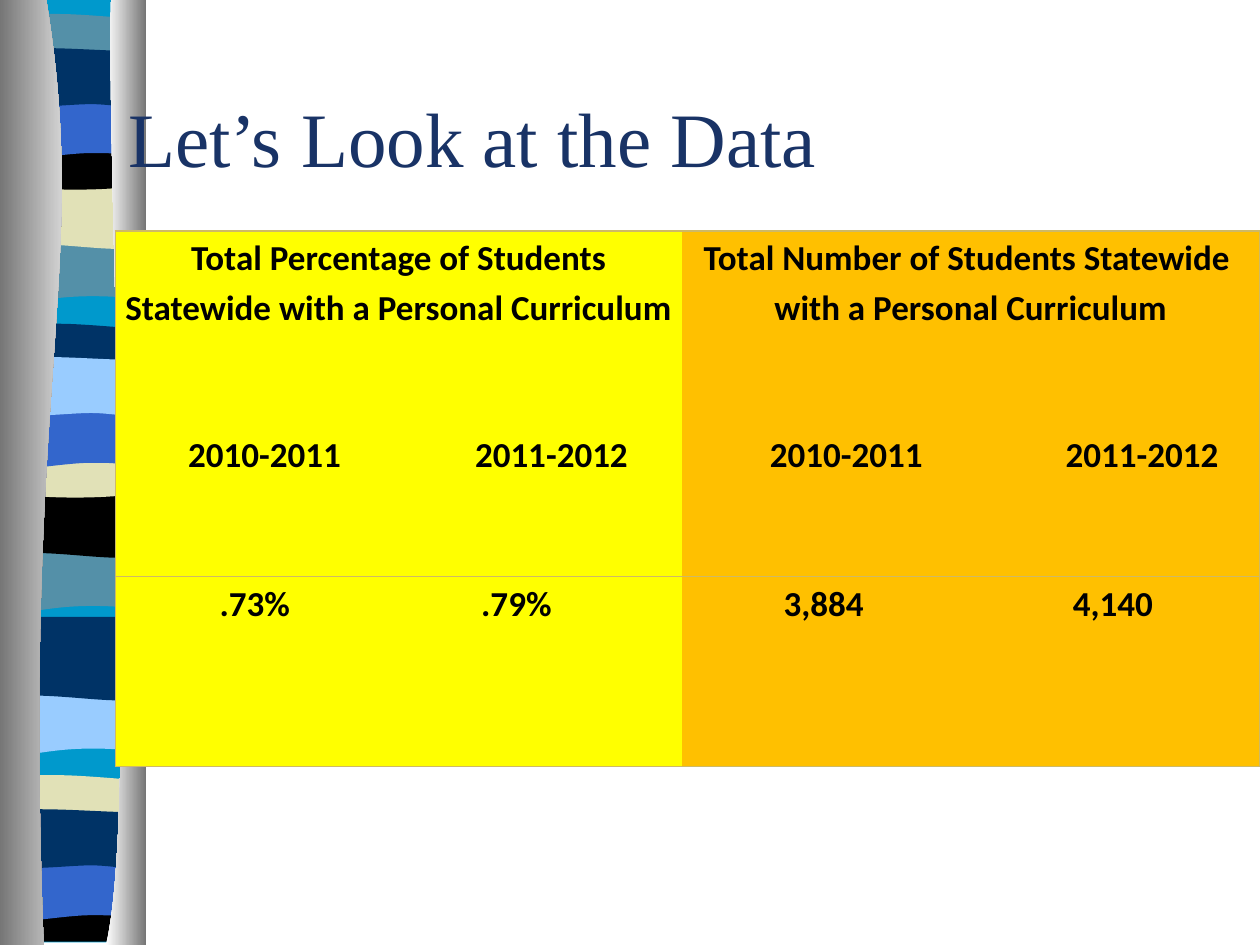
from dataclasses import dataclass

from lxml.etree import SubElement
from pptx import Presentation
from pptx.dml.color import RGBColor
from pptx.enum.text import MSO_ANCHOR, PP_ALIGN
from pptx.oxml import parse_xml
from pptx.oxml.ns import nsdecls, qn
from pptx.util import Pt

TEAL = RGBColor(0x00, 0x99, 0xCC)
SLATE = RGBColor(0x54, 0x90, 0xA8)
SAND = RGBColor(0xE1, 0xE1, 0xB7)
BLACK = RGBColor(0x00, 0x00, 0x00)
BLUE = RGBColor(0x33, 0x66, 0xCC)
NAVY = RGBColor(0x00, 0x33, 0x66)
SKY = RGBColor(0x99, 0xCC, 0xFF)
GREY = RGBColor(0x76, 0x76, 0x76)
WHITE = RGBColor(0xFF, 0xFF, 0xFF)
TITLE_BLUE = RGBColor(0x19, 0x33, 0x66)
YELLOW = RGBColor(0xFF, 0xFF, 0x00)
ORANGE = RGBColor(0xFF, 0xC0, 0x00)
BORDER = "CEB966"

PAGE_HEIGHT = 540
BAND_LEFT, BAND_RIGHT = 4, 82

Point = tuple[float, float]
Segment = tuple[Point, ...]  # one point for a line, three for a cubic curve


@dataclass(frozen=True)
class Wave:
    """Outline of a band, with heights measured down from its top."""
    depth: float
    bottom: tuple[Segment, ...]  # right to left
    top: tuple[Segment, ...] = (((BAND_RIGHT, 0),),)  # left to right


@dataclass(frozen=True)
class Band:
    colour: RGBColor
    top: float
    wave: Wave


@dataclass(frozen=True)
class Entry:
    text: str
    tabs: tuple[float, ...] = ()
    centred: bool = False
    space_before: float = 0


@dataclass(frozen=True)
class TableCell:
    row: int
    column: int
    colour: RGBColor
    entries: tuple[Entry, ...]
    span: int = 1


SWELL = Wave(42, (((28, 36), (17, 48), (4, 42)),))
RIPPLE = Wave(46, (((69, 51.5), (28, 42), (4, 46)),))
LENS = Wave(25.5, (((69, 29), (17, 29), (4, 25.5)),),
            (((9, -3.5), (21, -3), (34, -3)), ((47, -3), (72, -0.5), (82, 0))))
BOWL = Wave(31, (((69, 35.5), (17, 35.5), (4, 31)),), (((52, 3.5), (66, 0), (82, 0)),))
BASE = Wave(29.5, (((4, 29.5),),), BOWL.top)
ARCH = Wave(42, (((70, 38), (65, 38), (52, 38)), ((39, 38), (16, 42), (4, 42))))
FLAG = Wave(30.5, (((77, 34), (65, 30.5), (52, 30.5)), ((39, 30.5), (12, 34), (4, 30.5))),
            (((15, -3.5), (57, 0), (70, 0)), ((82, 0),)))

BANDS = (
    Band(SLATE, 129, SWELL), Band(SAND, 94.5, RIPPLE), Band(SLATE, 11, LENS),
    Band(BLACK, 74, BOWL), Band(BLUE, 49.5, ARCH), Band(NAVY, 29, FLAG),
    Band(SLATE, 306, SWELL), Band(BLACK, 271, RIPPLE), Band(NAVY, 188, LENS),
    Band(SAND, 250, BOWL), Band(BLUE, 226.5, ARCH), Band(SKY, 205.5, FLAG),
    Band(SKY, 387.5, SWELL), Band(NAVY, 352.5, RIPPLE), Band(SAND, 446, LENS),
    Band(BLACK, 508.5, BASE), Band(BLUE, 485, ARCH), Band(NAVY, 464, FLAG),
)

TABLE_CELLS = (
    TableCell(0, 0, YELLOW, (
        Entry("Total Percentage of Students Statewide with a Personal Curriculum", centred=True),
        Entry("\t2010-2011\t2011-2012", (36.5, 200.5), space_before=56)), span=2),
    TableCell(0, 2, ORANGE, (
        Entry("Total Number of Students Statewide ", centred=True),
        Entry("with a Personal Curriculum", centred=True),
        Entry("\t2010-2011\t2011-2012", (45.5, 214.5), space_before=56)), span=2),
    TableCell(1, 0, YELLOW, (Entry("\t.73%", (54.5,)),)),
    TableCell(1, 1, YELLOW, (Entry("\t.79%", (41,)),)),
    TableCell(1, 2, ORANGE, (Entry("3,884", centred=True),)),
    TableCell(1, 3, ORANGE, (Entry("4,140", centred=True),)),
)
COLUMN_WIDTHS = (163, 160.5, 162.5, 168)
ROW_HEIGHTS = (197.5, 108.5)


def draw_outline(page, start: Point, segments: tuple[Segment, ...],
                 colours: tuple[RGBColor, ...]) -> None:
    """Draw a closed outline, with a gradient when two colours are given."""
    builder = page.shapes.build_freeform(Pt(start[0]), Pt(start[1]))
    builder.add_line_segments([(Pt(x), Pt(y)) for segment in segments for x, y in segment])
    shape = builder.convert_to_shape()
    lines = iter(list(shape.element.iter(qn("a:lnTo"))))
    for segment in segments:
        group = [next(lines) for _ in segment]
        if len(group) == 3:
            curve = parse_xml(f'<a:cubicBezTo {nsdecls("a")}/>')
            group[0].addprevious(curve)
            for line in group:
                curve.append(line[0])
                line.getparent().remove(line)
    shape.shadow.inherit = False
    shape.line.fill.background()
    if len(colours) == 1:
        shape.fill.solid()
        shape.fill.fore_color.rgb = colours[0]
        return
    shape.fill.gradient()
    shape.fill.gradient_angle = 0
    for stop, colour in zip(shape.fill.gradient_stops, colours):
        stop.color.rgb = colour


def draw_band(page, band: Band) -> None:
    wave = band.wave
    outline = wave.top + (((BAND_RIGHT, wave.depth),),) + wave.bottom + (((BAND_LEFT, 0),),)
    placed = tuple(tuple((x, y + band.top) for x, y in segment) for segment in outline)
    draw_outline(page, (BAND_LEFT, band.top), placed, (band.colour,))


def draw_ribbon(page) -> None:
    draw_band(page, Band(TEAL, 0, Wave(538.5, (((BAND_LEFT, 538.5),),))))
    for band in BANDS:
        draw_band(page, band)
    for start, curve, edge, colours in (
            (26.5, ((52, 155.5), (12.5, 213), (25, PAGE_HEIGHT)), 0, (GREY, WHITE)),
            (63.5, ((60.5, 90), (80, 465), (60.5, PAGE_HEIGHT)), 83.5, (WHITE, GREY))):
        draw_outline(page, (start, 0),
                     (curve, ((edge, PAGE_HEIGHT),), ((edge, 0),), ((start, 0),)), colours)


def set_borders(cell, sides: str) -> None:
    """Line the given sides (letters of LRTB) and clear the others."""
    for index, side in enumerate("LRTB"):
        fill = (f'<a:solidFill><a:srgbClr val="{BORDER}"/></a:solidFill>'
                if side in sides else "<a:noFill/>")
        line = parse_xml(f'<a:ln{side} {nsdecls("a")} w="{Pt(1)}">{fill}</a:ln{side}>')
        cell._tc.get_or_add_tcPr().insert(index, line)


def write_entry(para, entry: Entry) -> None:
    para.text = entry.text
    para.alignment = PP_ALIGN.CENTER if entry.centred else PP_ALIGN.LEFT
    para.line_spacing = 1.15
    para.space_before = Pt(entry.space_before)
    para.font.name = "Calibri"
    para.font.size = Pt(20)
    para.font.bold = True
    para.font.color.rgb = BLACK
    if entry.tabs:
        tab_list = SubElement(para._p.get_or_add_pPr(), qn("a:tabLst"))
        for position in entry.tabs:
            SubElement(tab_list, qn("a:tab"), pos=str(Pt(position)), algn="l")
        para._p.pPr.insert_element_before(tab_list, "a:defRPr")


def draw_table(page) -> None:
    frame = page.shapes.add_table(len(ROW_HEIGHTS), len(COLUMN_WIDTHS), Pt(66), Pt(132),
                                  Pt(sum(COLUMN_WIDTHS)), Pt(sum(ROW_HEIGHTS)))
    table = frame.table
    table.first_row = table.horz_banding = False
    for column, width in zip(table.columns, COLUMN_WIDTHS):
        column.width = Pt(width)
    for row, height in zip(table.rows, ROW_HEIGHTS):
        row.height = Pt(height)
    last_column = len(COLUMN_WIDTHS) - 1
    for item in TABLE_CELLS:
        cell = table.cell(item.row, item.column)
        end = item.column + item.span - 1
        if item.span > 1:
            cell.merge(table.cell(item.row, end))
        cell.margin_left = cell.margin_right = Pt(5)
        cell.margin_top = cell.margin_bottom = 0
        for index, entry in enumerate(item.entries):
            text = cell.text_frame
            write_entry(text.add_paragraph() if index else text.paragraphs[0], entry)
        sides = "TB" + "L" * (item.column == 0) + "R" * (end == last_column)
        for column in range(item.column, end + 1):
            part = table.cell(item.row, column)
            part.fill.solid()
            part.fill.fore_color.rgb = item.colour
            set_borders(part, sides)


def place_title(page) -> None:
    title = page.shapes.title
    page.shapes.element.append(title.element)  # bring in front of the ribbon
    title.left, title.top, title.width, title.height = Pt(66), 0, Pt(654), Pt(156)
    title.text_frame.vertical_anchor = MSO_ANCHOR.MIDDLE
    para = title.text_frame.paragraphs[0]
    para.text = "Let’s Look at the Data"
    para.alignment = PP_ALIGN.LEFT
    para.font.name = "Times New Roman"
    para.font.size = Pt(44)
    para.font.color.rgb = TITLE_BLUE


def main() -> None:
    deck = Presentation()
    deck.slide_width, deck.slide_height = Pt(720), Pt(PAGE_HEIGHT)
    page = deck.slides.add_slide(deck.slide_layouts[5])
    draw_ribbon(page)
    place_title(page)
    draw_table(page)
    deck.save("out.pptx")


if __name__ == "__main__":
    main()
